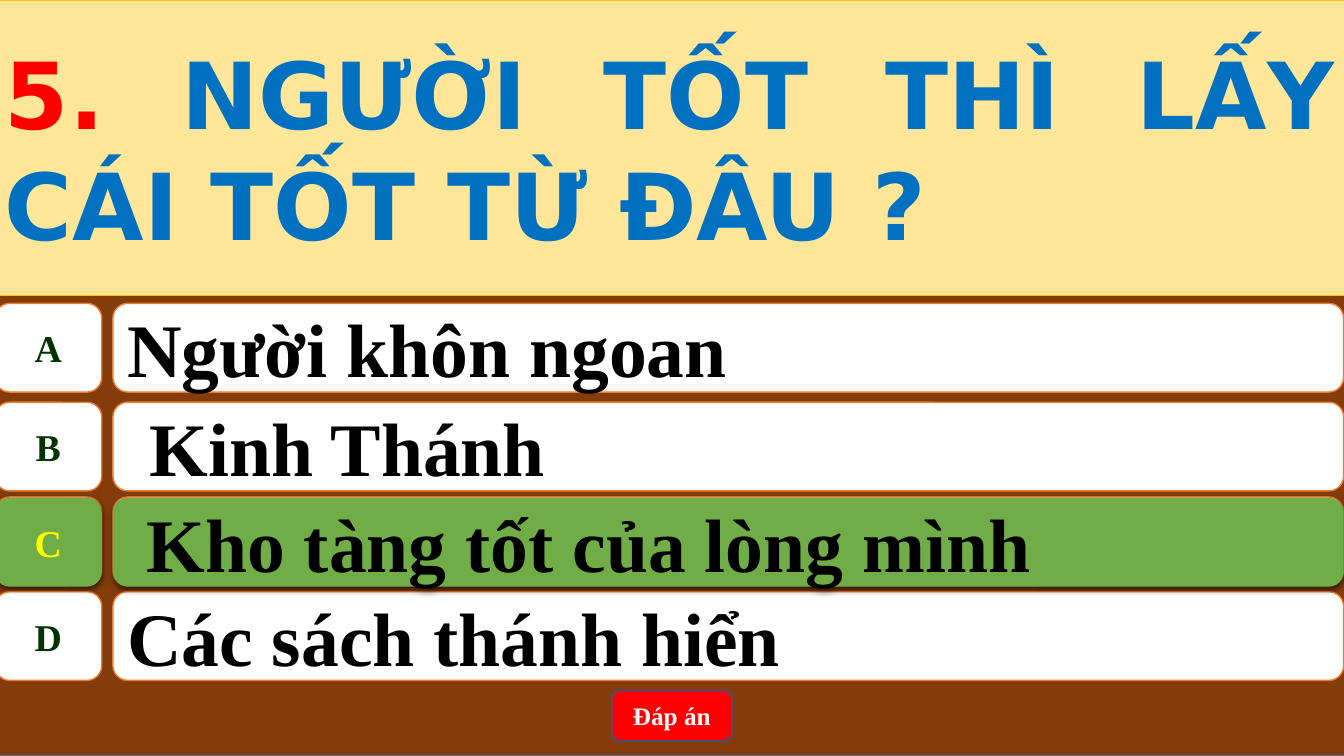
from lxml import etree
from pptx import Presentation
from pptx import util as u
from pptx.dml.color import RGBColor
from pptx.enum import shapes, text
from pptx.oxml.ns import qn

PX = 9144  # EMU in one px, 100 px to the inch
COLORS = {
    "brown": "843C0B", "steel": "43739E", "white": "FFFFFF", "orange": "ED7D31",
    "forest": "003300", "black": "000000", "red": "FF0000", "navy": "325491",
    "cream": "FFE699", "gold": "FFC000", "blue": "0070C0", "green": "70AD47",
    "yellow": "FFFF00",
}
RECT = shapes.MSO_SHAPE.RECTANGLE
ROUND = shapes.MSO_SHAPE.ROUNDED_RECTANGLE
BADGE = shapes.MSO_SHAPE.FLOWCHART_ALTERNATE_PROCESS
LEFT, CENTER, JUSTIFY = (text.PP_ALIGN.LEFT, text.PP_ALIGN.CENTER,
                         text.PP_ALIGN.JUSTIFY)


def rgb(name):
    return RGBColor.from_string(COLORS[name])


def write(sp, runs, size, font="Times New Roman", align=LEFT, wrap=True, indent=0):
    """Fill a shape with one bold paragraph of (text, colour) runs."""
    tf = sp.text_frame
    tf.word_wrap = wrap
    tf.vertical_anchor = text.MSO_ANCHOR.MIDDLE
    tf.margin_left = (10 + indent) * PX
    p = tf.paragraphs[0]
    p.alignment = align
    for words, color in runs:
        r = p.add_run()
        r.text = words
        r.font.name, r.font.size, r.font.bold = font, u.Pt(size), True
        r.font.color.rgb = rgb(color)


def drop_shadow(sp):
    effects = sp._element.spPr.find(qn("a:effectLst"))
    shadow = etree.SubElement(effects, qn("a:outerShdw"), blurRad="57150",
                              dist="19050", dir="5400000", algn="ctr", rotWithShape="0")
    color = etree.SubElement(shadow, qn("a:srgbClr"), val=COLORS["black"])
    etree.SubElement(color, qn("a:alpha"), val="63000")


class QuizSlide:
    def __init__(self, prs):
        self.s = prs.slides.add_slide(prs.slide_layouts[6])

    def box(self, kind, x, y, w, h, fill, line=None, width=1):
        sp = self.s.shapes.add_shape(kind, x * PX, y * PX, w * PX, h * PX)
        sp.shadow.inherit = False
        sp.fill.solid()
        sp.fill.fore_color.rgb = rgb(fill)
        if line:
            sp.line.color.rgb = rgb(line)
            sp.line.width = u.Pt(width)
        else:
            sp.line.fill.background()
        return sp

    def row(self, y, fill, line=None):
        """Draw the letter badge and the answer bar of one choice."""
        bar = self.box(ROUND, 112, y, 1221, 88, fill, line)
        badge = self.box(BADGE, -5, y, 106, 88, fill, line)
        return badge, bar

    def choice(self, cards, letter, answer, color, indent):
        badge, bar = cards
        write(badge, [(letter, color)], 27, align=CENTER, wrap=False)
        write(bar, [(answer, "black")], 54, indent=indent)

    def question(self, number, words):
        sp = self.box(RECT, -5, 0, 1339, 293, "cream", "gold", 0.5)
        write(sp, [(number, "red"), (words, "blue")], 66, "DejaVu Sans", JUSTIFY)

    def button(self, label):
        sp = self.box(ROUND, 607, 685, 119, 50, "red", "navy")
        write(sp, [(label, "white")], 18, align=CENTER)


def main():
    prs = Presentation()
    prs.slide_width, prs.slide_height = u.Emu(12192000), u.Emu(750 * PX)
    quiz = QuizSlide(prs)
    quiz.box(RECT, -5, 0, 1339, 750, "brown", "steel")

    choices = [
        (301, "A", "Người khôn ngoan", 0),
        (399, "B", "Kinh Thánh", 22),
        (587, "D", "Các sách thánh hiển", 0),
    ]
    for y, letter, answer, indent in choices:
        quiz.choice(quiz.row(y, "white", "orange"), letter, answer, "forest", indent)
    quiz.button("Đáp án")
    quiz.question("5. ", "NGƯỜI TỐT THÌ LẤY CÁI TỐT TỪ ĐÂU ?")

    # The right answer lies on a plain card whose orange rim shows above it
    quiz.row(493, "white", "orange")
    correct = quiz.row(494, "green")
    for sp in correct:
        drop_shadow(sp)
    quiz.choice(correct, "C", "Kho tàng tốt của lòng mình", "yellow", 19)
    prs.save("out.pptx")


if __name__ == "__main__":
    main()
